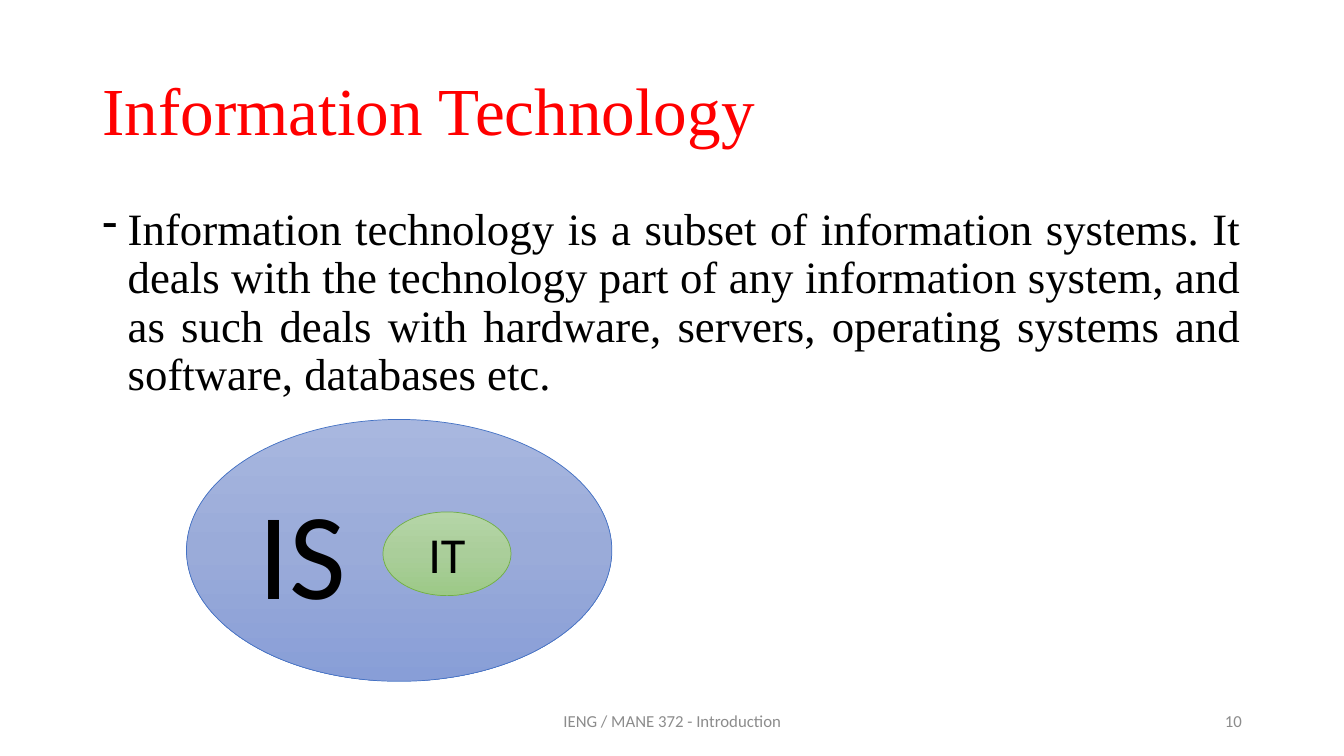
from copy import deepcopy
from dataclasses import dataclass

from lxml import etree
from pptx import Presentation
from pptx.dml.color import RGBColor
from pptx.enum.shapes import MSO_SHAPE
from pptx.enum.text import MSO_ANCHOR, PP_ALIGN
from pptx.oxml.ns import qn
from pptx.slide import Slide
from pptx.text.text import TextFrame, _Paragraph
from pptx.util import Cm, Pt

LEFT, CENTER, RIGHT, JUSTIFY = PP_ALIGN.LEFT, PP_ALIGN.CENTER, PP_ALIGN.RIGHT, PP_ALIGN.JUSTIFY
TOP, MIDDLE = MSO_ANCHOR.TOP, MSO_ANCHOR.MIDDLE
OVAL = MSO_SHAPE.OVAL
TITLE_ONLY = 5
SERIF, SANS = "Times New Roman", "Calibri"
MARGIN, CONTENT_WIDTH = 2.33, 29.21
FOOTER_TOP, FOOTER_HEIGHT = 17.65, 1.02


@dataclass
class Box:
    left: float
    top: float
    width: float
    height: float

    def lengths(self) -> tuple[Cm, Cm, Cm, Cm]:
        return Cm(self.left), Cm(self.top), Cm(self.width), Cm(self.height)


@dataclass
class Label:
    text: str
    size: float
    font: str = SANS
    color: str = "000000"
    align: PP_ALIGN = LEFT
    anchor: MSO_ANCHOR = MIDDLE


@dataclass
class Ellipse:
    box: Box
    label: Label
    gradient: tuple[str, str, str]
    outline: str


TITLE_BOX = Box(MARGIN, 1.02, CONTENT_WIDTH, 3.68)
TITLE = Label("Information Technology", 48, SERIF, "FF0000")
BODY_BOX = Box(MARGIN, 5.08, CONTENT_WIDTH, 12.09)
BODY = Label(
    "Information technology is a subset of information systems. "
    "It deals with the technology part of any information system, "
    "and as such deals with hardware, servers, operating systems "
    "and software, databases etc. ",
    32, SERIF, align=JUSTIFY, anchor=TOP)
ELLIPSES = [
    Ellipse(Box(4.7, 10.57, 10.72, 6.6), Label("IS", 88),
            ("A8B7DF", "9AABD9", "889ED7"), "4472C4"),
    Ellipse(Box(9.65, 12.9, 3.23, 2.11), Label("IT", 36, align=CENTER),
            ("B5D5A7", "AACE9A", "9CC987"), "70AD47"),
]
FOOTERS = [
    (Box(11.23, FOOTER_TOP, 11.43, FOOTER_HEIGHT),
     Label("IENG / MANE 372 - Introduction", 12, color="8C8C8C", align=CENTER)),
    (Box(23.93, FOOTER_TOP, 7.62, FOOTER_HEIGHT),
     Label("10", 12, color="8C8C8C", align=RIGHT)),
]


def rgb(color: str) -> RGBColor:
    return RGBColor.from_string(color)


def write_label(frame: TextFrame, label: Label) -> _Paragraph:
    frame.word_wrap = True
    frame.vertical_anchor = label.anchor
    paragraph = frame.paragraphs[0]
    paragraph.alignment = label.align
    run = paragraph.add_run()
    run.text = label.text
    run.font.size = Pt(label.size)
    run.font.name = label.font
    run.font.color.rgb = rgb(label.color)
    return paragraph


def add_label(slide: Slide, box: Box, label: Label) -> _Paragraph:
    return write_label(slide.shapes.add_textbox(*box.lengths()).text_frame, label)


def add_title(slide: Slide) -> None:
    title = slide.shapes.title
    title.left, title.top, title.width, title.height = TITLE_BOX.lengths()
    write_label(title.text_frame, TITLE).line_spacing = 0.9


def add_body(slide: Slide) -> None:
    paragraph = add_label(slide, BODY_BOX, BODY)
    paragraph.line_spacing = 0.9
    paragraph.space_before = Pt(10)
    properties = paragraph._p.get_or_add_pPr()
    properties.set("marL", str(Cm(0.64)))
    properties.set("indent", str(Cm(-0.64)))
    etree.SubElement(properties, qn("a:buFontTx"))
    etree.SubElement(properties, qn("a:buChar")).set("char", "-")


def add_ellipse(slide: Slide, ellipse: Ellipse) -> None:
    shape = slide.shapes.add_shape(OVAL, *ellipse.box.lengths())
    shape.shadow.inherit = False
    shape.fill.gradient()
    shape.fill.gradient_angle = 270
    stops = shape._element.spPr.find(qn("a:gradFill")).find(qn("a:gsLst"))
    stops.insert(1, deepcopy(stops[0]))
    for index, (stop, color) in enumerate(zip(shape.fill.gradient_stops, ellipse.gradient)):
        stop.position = index / 2
        stop.color.rgb = rgb(color)
    shape.line.color.rgb = rgb(ellipse.outline)
    shape.line.width = Pt(0.5)
    write_label(shape.text_frame, ellipse.label)


def main() -> None:
    presentation = Presentation()
    presentation.slide_width, presentation.slide_height = Cm(33.87), Cm(19.05)
    slide = presentation.slides.add_slide(presentation.slide_layouts[TITLE_ONLY])
    add_title(slide)
    add_body(slide)
    for ellipse in ELLIPSES:
        add_ellipse(slide, ellipse)
    for box, label in FOOTERS:
        add_label(slide, box, label)
    presentation.save("out.pptx")


if __name__ == "__main__":
    main()
